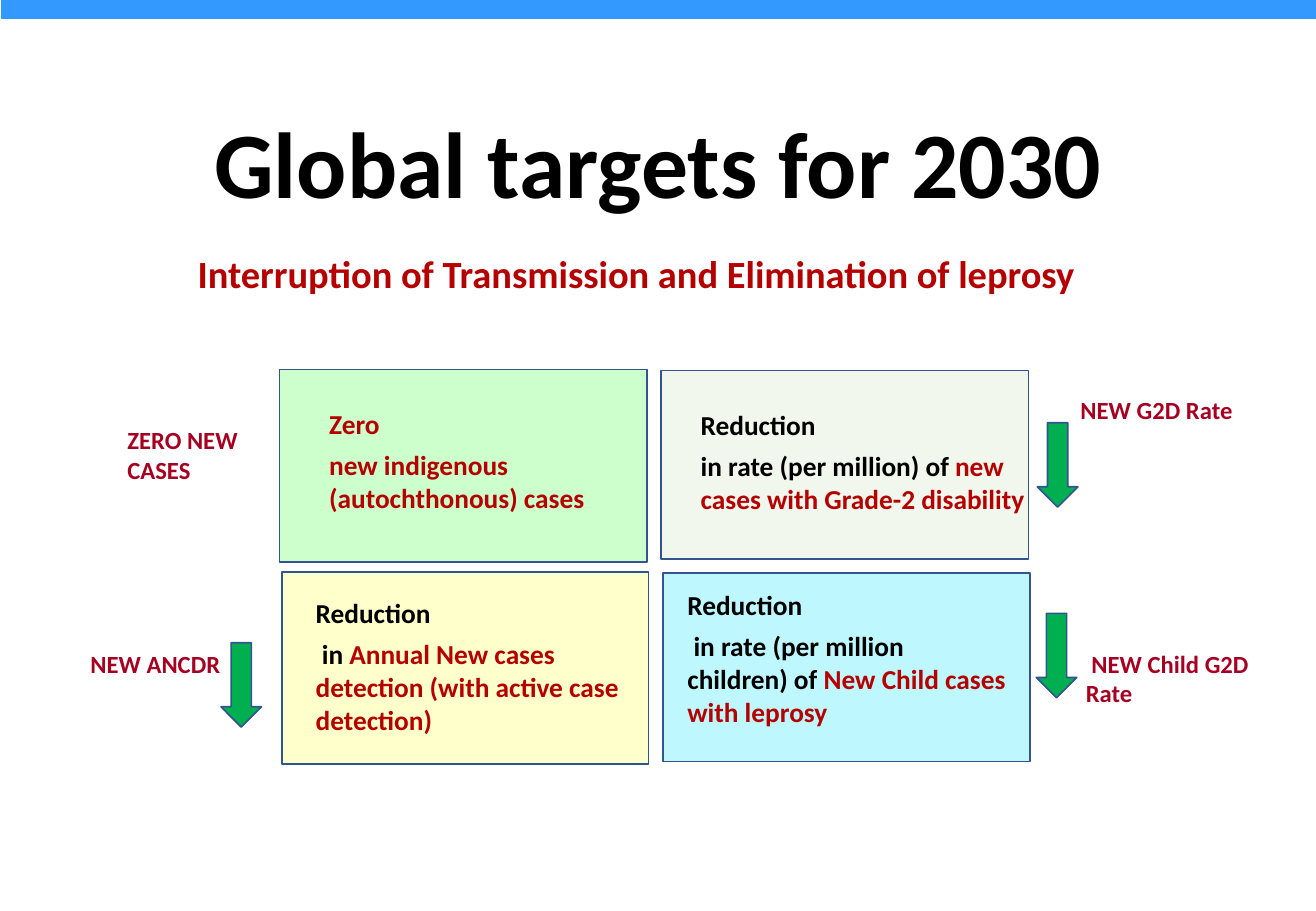
from pptx import Presentation
from pptx.dml.color import RGBColor
from pptx.enum.shapes import MSO_SHAPE as Shape
from pptx.enum.text import MSO_ANCHOR as Anchor, PP_ALIGN as Align
from pptx.util import Pt

BLACK, RED, CRIMSON = "000000", "B50000", "A50021"
BLUE, OUTLINE, GREEN = "3399FF", "325491", "00B050"


def add_block(kind, place, fill, line):
    block = page.shapes.add_shape(kind, *[Pt(v) for v in place])
    block.shadow.inherit = False
    block.fill.solid()
    block.fill.fore_color.rgb = RGBColor.from_string(fill)
    block.line.color.rgb = RGBColor.from_string(line)
    block.line.width = Pt(1)


def write(box, paragraphs, size, space_after=0):
    frame = box.text_frame
    frame.word_wrap = True
    for number, runs in enumerate(paragraphs):
        para = frame.add_paragraph() if number else frame.paragraphs[0]
        para.space_after = Pt(space_after)
        for text, color in runs:
            span = para.add_run()
            span.text = text
            span.font.name = "Calibri"
            span.font.size = Pt(size)
            span.font.bold = True
            span.font.color.rgb = RGBColor.from_string(color)


deck = Presentation()
deck.slide_width, deck.slide_height = Pt(780), Pt(540)
page = deck.slides.add_slide(deck.slide_layouts[5])

# Top bar
add_block(Shape.RECTANGLE, (1, 0, 779, 11), BLUE, BLUE)

# Title
title = page.shapes.title
title.left, title.top, title.width, title.height = Pt(54), Pt(67), Pt(672.5), Pt(65)
write(title, [[("Global targets for 2030", BLACK)]], 55.5)
title.text_frame.vertical_anchor = Anchor.BOTTOM
title.text_frame.paragraphs[0].alignment = Align.CENTER
title.text_frame.paragraphs[0].line_spacing = 0.8

# Subtitle
subtitle = page.shapes.add_textbox(Pt(110), Pt(147.6), Pt(538.5), Pt(39))
write(subtitle, [[("Interruption of Transmission and Elimination of leprosy", RED)]], 22.8)
subtitle.text_frame.paragraphs[0].line_spacing = 0.9

# Target cards: panel place, fill, text place, paragraphs
cards = [
    ((165.6, 219, 218, 114), "CCFFCC", (188, 237.6, 195, 108),
     [[("Zero", RED)],
      [("new indigenous (autochthonous) cases", RED)]]),
    ((391.7, 219.6, 218, 111.6), "F1F7EC", (408.2, 238.2, 210.2, 108),
     [[("Reduction", BLACK)],
      [("in rate (per million) of ", BLACK), ("new cases with Grade-2 disability", RED)]]),
    ((167, 339, 217.4, 114), "FFFFCC", (180, 350, 195, 127.4),
     [[("Reduction", BLACK)],
      [(" in ", BLACK), ("Annual New cases detection (with active case detection)", RED)]]),
    ((393, 339.8, 217.4, 111.6), "BEF8FE", (400.3, 345, 205.2, 127.4),
     [[("Reduction", BLACK)],
      [(" in rate (per million children) of ", BLACK), ("New Child cases with leprosy", RED)]]),
]
for panel, fill, place, paragraphs in cards:
    add_block(Shape.RECTANGLE, panel, fill, OUTLINE)
    box = page.shapes.add_textbox(*[Pt(v) for v in place])
    write(box, paragraphs, 16.2, 4.9)

# Side labels
labels = [
    ("ZERO NEW CASES", 68.4, 248.4, 119.5, 42.5),
    (" NEW G2D Rate", 630, 230.4, 137.5, 25),
    (" NEW ANCDR", 43.2, 381, 137.5, 25),
    (" NEW Child G2D Rate", 636.5, 381, 137.5, 42.5),
]
for text, *place in labels:
    box = page.shapes.add_textbox(*[Pt(v) for v in place])
    write(box, [[(text, CRIMSON)]], 14.6)

# Downward arrows
for left, top in [(131, 381), (614.2, 363.6), (614.9, 250.6)]:
    add_block(Shape.DOWN_ARROW, (left, top, 24, 50), GREEN, OUTLINE)

deck.save("out.pptx")
